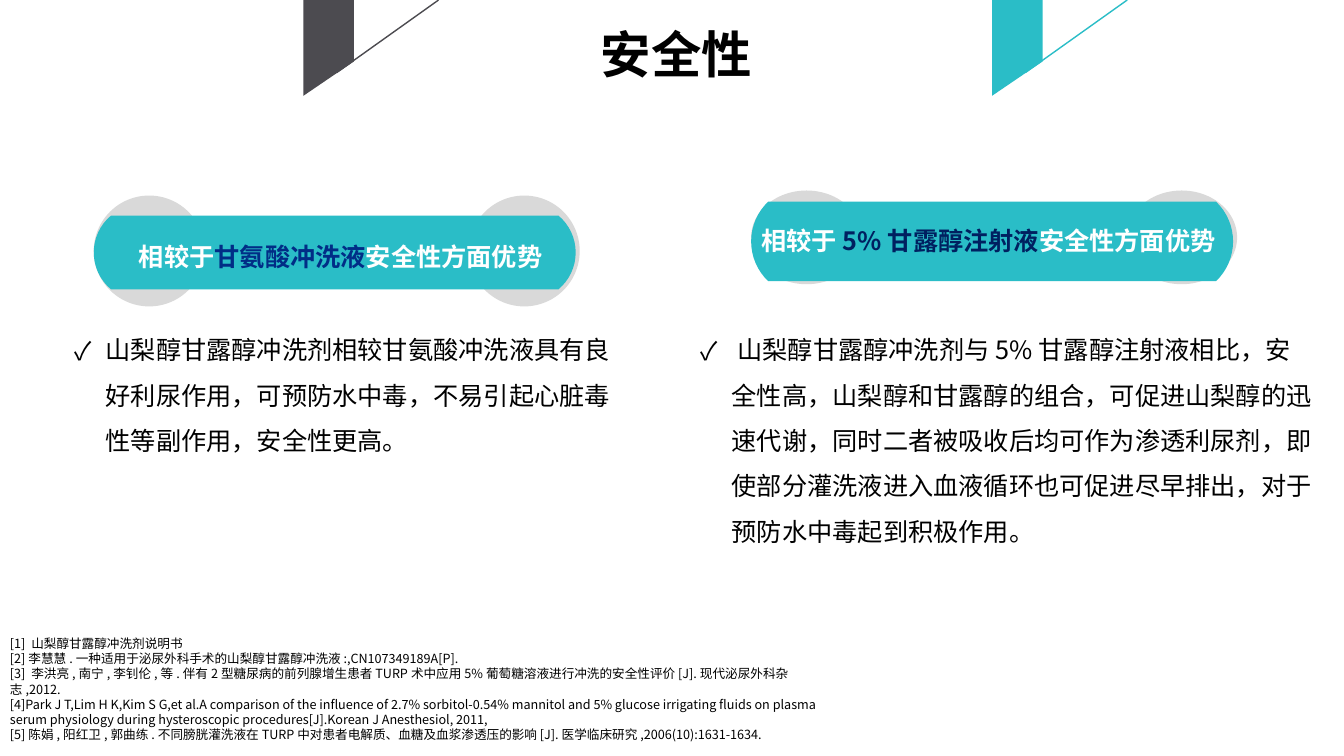
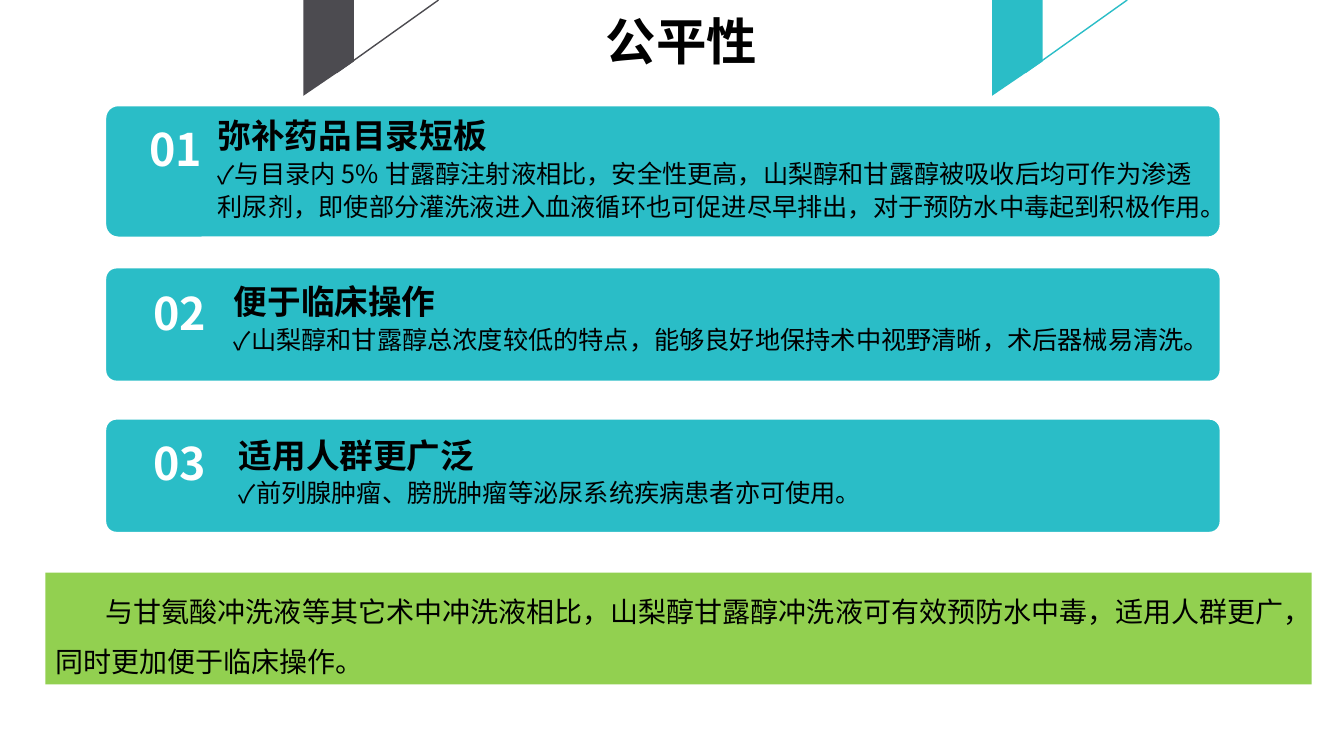
import math
import pptx
import pptx.dml.color
import pptx.enum.shapes
import pptx.enum.text
import pptx.oxml.ns
import pptx.util
from lxml import etree

FONT = "Noto Sans CJK SC"
TEAL, CHARCOAL, GRAY, GREEN = "2ABDC7", "4C4B50", "D9D9D9", "92D050"
BLACK, WHITE, NAVY = "000000", "FFFFFF", "002060"
NAVY_GRADIENT = ("012D86", "0E2557")
SHAPE = pptx.enum.shapes.MSO_SHAPE
ALIGN = pptx.enum.text.PP_ALIGN
ANCHOR = pptx.enum.text.MSO_ANCHOR
INDENT = 0.31

CORNERS = [(3.01, CHARCOAL), (9.84, TEAL)]

COMPARISONS = [
    {
        "pill": (0.93, 2.14, 4.78, 0.73), "disc": (1.94, 1.1),
        "label": (1.28, 2.34, 4.21, 0.4),
        "runs": [("相较于", WHITE), ("甘氨酸冲洗液", NAVY_GRADIENT), ("安全性方面优势", WHITE)],
        "body": (0.64, 3.12, 5.68, 1.46),
        "text": "山梨醇甘露醇冲洗剂相较甘氨酸冲洗液具有良好利尿作用，可预防水中毒，不易引起心脏毒性等副作用，安全性更高。",
    },
    {
        "pill": (7.45, 2, 4.78, 0.79), "disc": (1.89, 0.93),
        "label": (7.45, 2.19, 4.78, 0.4),
        "runs": [("相较于", WHITE), ("5%甘露醇注射液", NAVY), ("安全性方面优势", WHITE)],
        "body": (6.85, 3.12, 6.27, 2.37),
        "text": " 山梨醇甘露醇冲洗剂与5%甘露醇注射液相比，安全性高，山梨醇和甘露醇的组合，可促进山梨醇的迅速代谢，同时二者被吸收后均可作为渗透利尿剂，即使部分灌洗液进入血液循环也可促进尽早排出，对于预防水中毒起到积极作用。",
    },
]

REFERENCES = [
    "[1] 山梨醇甘露醇冲洗剂说明书",
    "[2]李慧慧.一种适用于泌尿外科手术的山梨醇甘露醇冲洗液:,CN107349189A[P].",
    "[3] 李洪亮,南宁,李钊伦,等.伴有2型糖尿病的前列腺增生患者TURP术中应用5%葡萄糖溶液进行冲洗的安全性评价[J].现代泌尿外科杂志,2012.",
    "[4]Park J T,Lim H K,Kim S G,et al.A comparison of the influence of 2.7% sorbitol-0.54% mannitol and 5% glucose irrigating fluids on plasma serum physiology during hysteroscopic procedures[J].Korean J Anesthesiol, 2011,",
    "[5]陈娟,阳红卫,郭曲练.不同膀胱灌洗液在TURP中对患者电解质、血糖及血浆渗透压的影响[J].医学临床研究,2006(10):1631-1634.",
]

CARDS = [
    {"top": 1.04, "height": 1.32, "number": (1, 1.26, 1.49, 0.38), "box": (1.85, 1.1, 10.18, 1.22),
     "heading": "弥补药品目录短板",
     "text": "与目录内5%甘露醇注射液相比，安全性更高，山梨醇和甘露醇被吸收后均可作为渗透利尿剂，即使部分灌洗液进入血液循环也可促进尽早排出，对于预防水中毒起到积极作用。"},
    {"top": 2.65, "height": 1.14, "number": (1.04, 2.91, 1.49, 0.32), "box": (2.01, 2.75, 9.85, 1.05),
     "heading": "便于临床操作",
     "text": "山梨醇和甘露醇总浓度较低的特点，能够良好地保持术中视野清晰，术后器械易清洗。"},
    {"top": 4.15, "height": 1.14, "number": (1.04, 4.4, 1.49, 0.32), "box": (2.06, 4.27, 10.05, 1.05),
     "heading": "适用人群更广泛",
     "text": "前列腺肿瘤、膀胱肿瘤等泌尿系统疾病患者亦可使用。"},
]

SUMMARY = "与甘氨酸冲洗液等其它术中冲洗液相比，山梨醇甘露醇冲洗液可有效预防水中毒，适用人群更广，同时更加便于临床操作。"


def rgb(color):
    return pptx.dml.color.RGBColor.from_string(color)


def inches(values):
    return [pptx.util.Inches(value) for value in values]


def paint(shape, fill, line=None):
    shape.shadow.inherit = False
    shape.fill.solid()
    shape.fill.fore_color.rgb = rgb(fill)
    if line:
        shape.line.color.rgb = rgb(line)
        shape.line.width = pptx.util.Pt(2)
    else:
        shape.line.fill.background()


def add_preset(shapes, kind, box, fill, line=None):
    shape = shapes.add_shape(kind, *inches(box))
    paint(shape, fill, line)
    return shape


def add_outline(shapes, points, fill):
    corners = [tuple(inches(point)) for point in points]
    builder = shapes.build_freeform(*corners[0])
    builder.add_line_segments(corners[1:], close=True)
    paint(builder.convert_to_shape(), fill)


def add_run(paragraph, text, size, color=BLACK, bold=False):
    run = paragraph.add_run()
    run.text = text
    font = run.font
    font.size = pptx.util.Pt(size)
    font.bold = bold
    font.name = FONT
    if isinstance(color, tuple):
        font.fill.gradient()
        font.fill.gradient_angle = 0
        for stop, stop_color in zip(font.fill.gradient_stops, color):
            stop.color.rgb = rgb(stop_color)
    else:
        font.color.rgb = rgb(color)
    properties = run._r.get_or_add_rPr()
    etree.SubElement(properties, pptx.oxml.ns.qn("a:ea"), typeface=FONT)


def style_paragraph(paragraph, spacing=1.0, left=0, first=0, bullet=False, align=ALIGN.LEFT):
    paragraph.alignment = align
    paragraph.line_spacing = spacing
    properties = paragraph._p.get_or_add_pPr()
    properties.set("marL", str(pptx.util.Inches(left)))
    properties.set("indent", str(pptx.util.Inches(first)))
    if bullet:
        etree.SubElement(properties, pptx.oxml.ns.qn("a:buFont"), typeface=FONT)
        etree.SubElement(properties, pptx.oxml.ns.qn("a:buChar"), char="✓")


def add_frame(shapes, box, inset=True):
    frame = shapes.add_textbox(*inches(box)).text_frame
    frame.word_wrap = True
    if not inset:
        frame.margin_left = frame.margin_right = frame.margin_top = frame.margin_bottom = 0
    return frame


def add_base(presentation, title, left, top):
    slide = presentation.slides.add_slide(presentation.slide_layouts[6])
    for x, color in CORNERS:
        add_outline(slide.shapes, [(x, 0), (x + 0.5, 0), (x + 0.5, 0.61), (x, 0.95)], color)
        line = slide.shapes.add_connector(
            pptx.enum.shapes.MSO_CONNECTOR.STRAIGHT, *inches((x + 0.33, 0.72, x + 1.34, 0)))
        line.line.color.rgb = rgb(color)
        line.line.width = pptx.util.Pt(1)
        etree.SubElement(line._element.spPr, pptx.oxml.ns.qn("a:effectLst"))
    frame = add_frame(slide.shapes, (left, top, 1.91, 0.71))
    add_run(frame.paragraphs[0], title, 36, bold=True)
    return slide


def pill_points(left, top, width, height, bulge=0.17, steps=16):
    half = height / 2
    radius = (half ** 2 + bulge ** 2) / (2 * bulge)
    reach = math.asin(half / radius)
    angles = [reach * (2 * step / steps - 1) for step in range(steps + 1)]
    arc = [(radius * (1 - math.cos(angle)), top + half + radius * math.sin(angle)) for angle in angles]
    right_side = [(left + width - x, y) for x, y in arc]
    left_side = [(left + x, y) for x, y in reversed(arc)]
    return right_side + left_side


def add_comparison(slide, item):
    group = slide.shapes.add_group_shape().shapes
    left = item["pill"][0]
    disc_top, disc_height = item["disc"]
    for offset in (0, 3.72):
        add_preset(group, SHAPE.OVAL, (left + offset, disc_top, 1.1, disc_height), GRAY)
    add_outline(group, pill_points(*item["pill"]), TEAL)
    label = add_frame(group, item["label"]).paragraphs[0]
    for text, color in item["runs"]:
        add_run(label, text, 18, color, True)
    body = add_frame(slide.shapes, item["body"]).paragraphs[0]
    style_paragraph(body, 1.5, INDENT, -INDENT, True)
    add_run(body, item["text"], 18)


def add_card(slide, number, card):
    group = slide.shapes.add_group_shape().shapes
    panel = add_preset(group, SHAPE.ROUNDED_RECTANGLE, (1.04, card["top"], 11.07, card["height"]), TEAL, WHITE)
    panel.adjustments[0] = 0.1
    frame = add_frame(group, card["number"], False)
    frame.vertical_anchor = ANCHOR.MIDDLE
    style_paragraph(frame.paragraphs[0], 1.1, align=ALIGN.CENTER)
    add_run(frame.paragraphs[0], f"{number:02d}", 32, WHITE, True)
    frame = add_frame(group, card["box"], False)
    heading = frame.paragraphs[0]
    style_paragraph(heading, 1.1, INDENT)
    add_run(heading, card["heading"], 24, bold=True)
    detail = frame.add_paragraph()
    style_paragraph(detail, 1.1, INDENT, bullet=True)
    add_run(detail, card["text"], 18)


def build_safety(presentation):
    slide = add_base(presentation, "安全性", 5.86, 0.18)
    for item in COMPARISONS:
        add_comparison(slide, item)
    frame = add_frame(slide.shapes, (0, 6.26, 8.31, 1.01))
    for index, reference in enumerate(REFERENCES):
        paragraph = frame.add_paragraph() if index else frame.paragraphs[0]
        add_run(paragraph, reference, 9)


def build_fairness(presentation):
    slide = add_base(presentation, "公平性", 5.91, 0.05)
    for number, card in enumerate(CARDS, 1):
        add_card(slide, number, card)
    frame = add_preset(slide.shapes, SHAPE.RECTANGLE, (0.45, 5.68, 12.56, 1.11), GREEN).text_frame
    frame.word_wrap = True
    frame.vertical_anchor = ANCHOR.TOP
    style_paragraph(frame.paragraphs[0], 1.5, first=0.5)
    add_run(frame.paragraphs[0], SUMMARY, 20)


def main():
    presentation = pptx.Presentation()
    presentation.slide_width, presentation.slide_height = inches((13.33, 7.5))
    build_safety(presentation)
    build_fairness(presentation)
    presentation.save("out.pptx")


if __name__ == "__main__":
    main()
